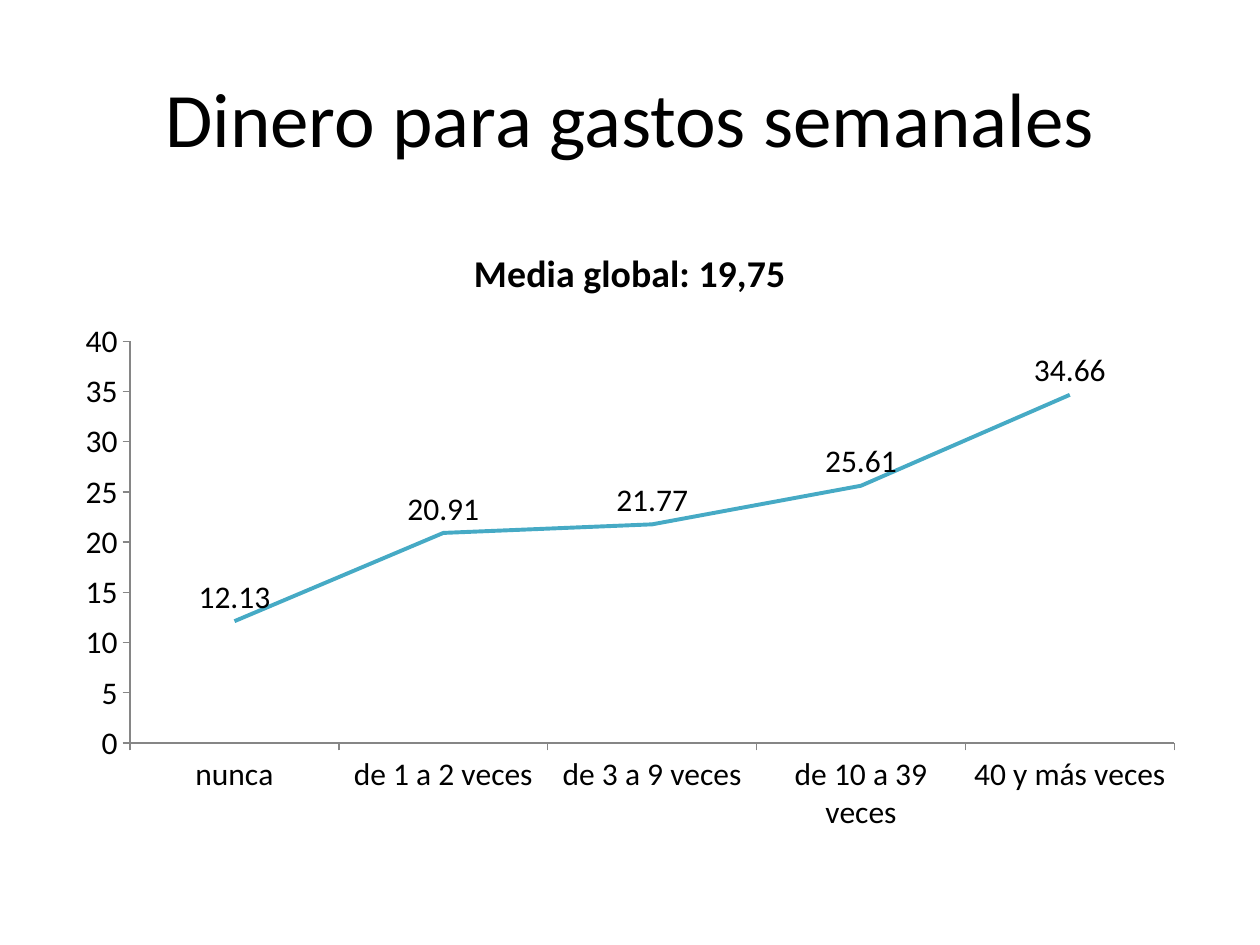
import pptx
import pptx.chart.data
import pptx.dml.color
import pptx.enum.chart
import pptx.enum.text
import pptx.util

PX = 9144  # EMU per px, 100 px to the inch
FONT = "Calibri"
HEX = {"text": "000000", "line": "46AAC5", "axis": "868686"}
DATA = {
    "nunca": 12.13,
    "de 1 a 2 veces": 20.91,
    "de 3 a 9 veces": 21.77,
    "de 10 a 39 veces": 25.61,
    "40 y más veces": 34.66,
}


def rgb(name):
    return pptx.dml.color.RGBColor.from_string(HEX[name])


def emu(box):
    return [n * PX for n in box]


def style(font, size, bold=False):
    font.name = FONT
    font.size = pptx.util.Pt(size)
    font.bold = bold
    font.color.rgb = rgb("text")


def add_title(slide, box, text):
    frame = slide.shapes.add_textbox(*emu(box)).text_frame
    frame.word_wrap = True
    frame.vertical_anchor = pptx.enum.text.MSO_ANCHOR.MIDDLE
    para = frame.paragraphs[0]
    para.alignment = pptx.enum.text.PP_ALIGN.CENTER
    run = para.add_run()
    run.text = text
    style(run.font, 44)


def style_axis(axis):
    axis.has_major_gridlines = False
    axis.major_tick_mark = pptx.enum.chart.XL_TICK_MARK.OUTSIDE
    axis.minor_tick_mark = pptx.enum.chart.XL_TICK_MARK.NONE
    axis.format.line.color.rgb = rgb("axis")
    axis.format.line.width = pptx.util.Pt(0.75)
    style(axis.tick_labels.font, 18)


def add_graph(slide, box, title):
    data = pptx.chart.data.CategoryChartData()
    data.categories = list(DATA)
    data.add_series("Series 1", list(DATA.values()))
    kind = pptx.enum.chart.XL_CHART_TYPE.LINE
    chart = slide.shapes.add_chart(kind, *emu(box), data).chart
    style(chart.font, 18)
    chart.has_legend = False

    chart.has_title = True
    chart.chart_title.include_in_layout = False
    run = chart.chart_title.text_frame.paragraphs[0].add_run()
    run.text = title
    style(run.font, 21.6, bold=True)

    style_axis(chart.category_axis)
    style_axis(chart.value_axis)
    chart.value_axis.minimum_scale = 0
    chart.value_axis.maximum_scale = 40
    chart.value_axis.major_unit = 5

    plot = chart.plots[0]
    plot.vary_by_categories = False
    line = plot.series[0]
    line.smooth = False
    line.marker.style = pptx.enum.chart.XL_MARKER_STYLE.NONE
    line.format.line.color.rgb = rgb("line")
    line.format.line.width = pptx.util.Pt(2.25)
    labels = line.data_labels
    labels.show_value = True
    labels.position = pptx.enum.chart.XL_LABEL_POSITION.ABOVE
    style(labels.font, 18)


def main():
    deck = pptx.Presentation()
    deck.slide_width, deck.slide_height = emu((1000, 750))
    slide = deck.slides.add_slide(deck.slide_layouts[6])
    add_title(slide, (50, 30, 900, 125), "Dinero para gastos semanales")
    add_graph(slide, (50, 175, 900, 495), "Media global: 19,75")
    deck.save("out.pptx")


if __name__ == "__main__":
    main()
